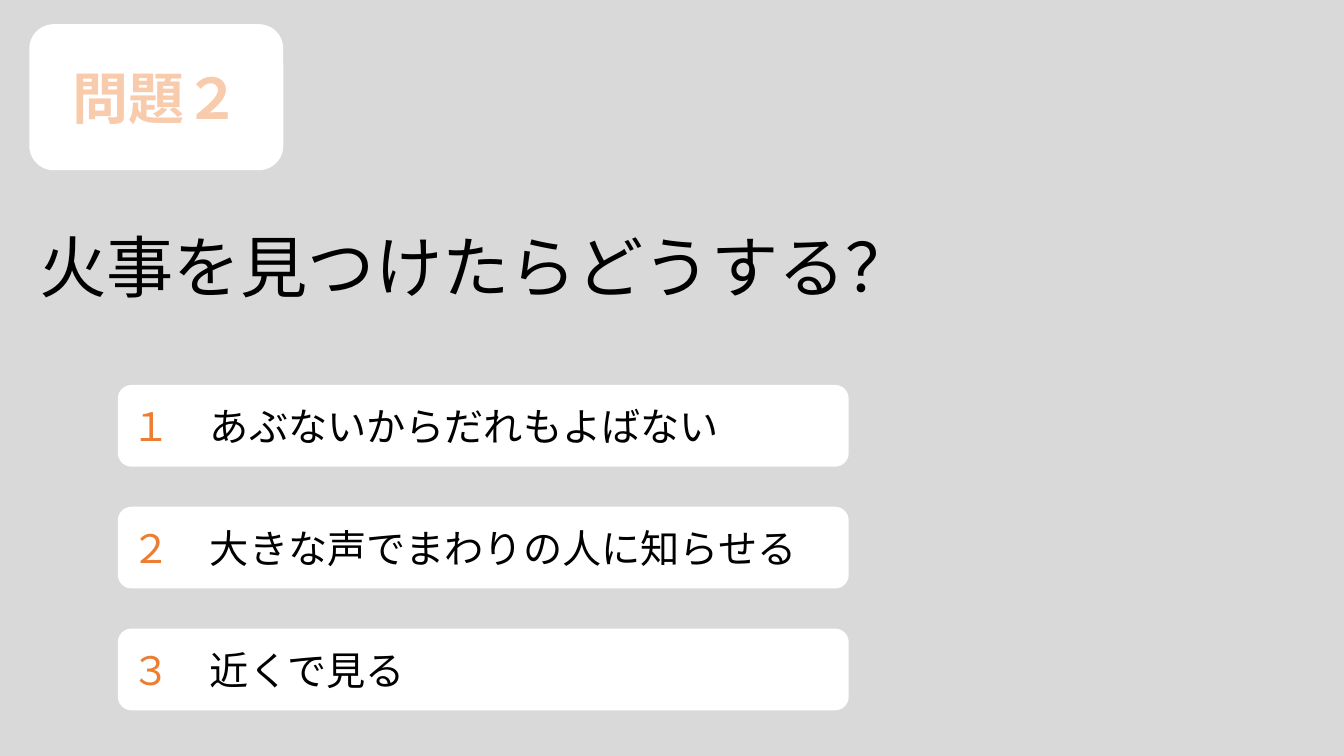
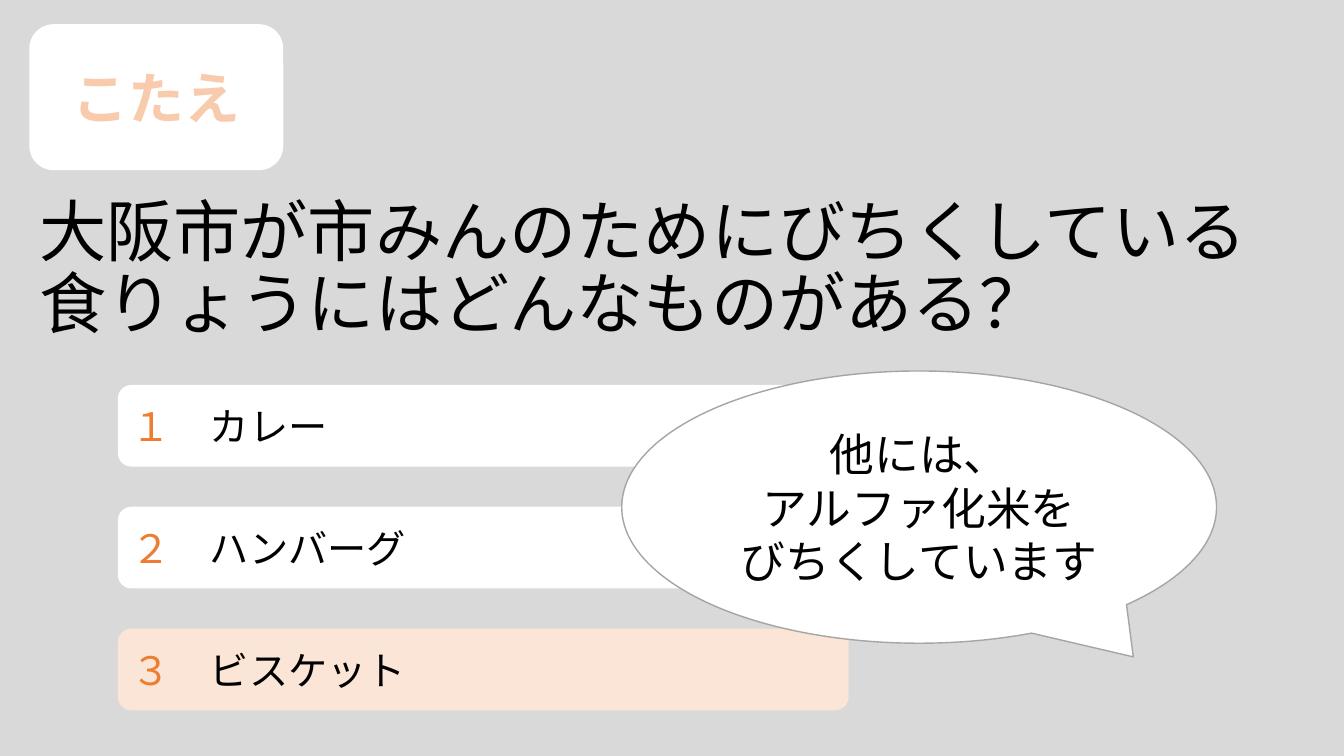
import pptx
import pptx.dml.color
import pptx.enum.shapes
import pptx.enum.text
import pptx.oxml.ns
import pptx.util
from lxml import etree

Cm = pptx.util.Cm
Pt = pptx.util.Pt
RGBColor = pptx.dml.color.RGBColor
Shape = pptx.enum.shapes.MSO_SHAPE
Align = pptx.enum.text.PP_ALIGN
Anchor = pptx.enum.text.MSO_ANCHOR
qn = pptx.oxml.ns.qn

GREY = RGBColor(0xD9, 0xD9, 0xD9)
WHITE = RGBColor(0xFF, 0xFF, 0xFF)
BLACK = RGBColor(0x00, 0x00, 0x00)
ORANGE = RGBColor(0xED, 0x7D, 0x31)
PEACH = RGBColor(0xF8, 0xCB, 0xAD)
PALE_PEACH = RGBColor(0xFB, 0xE5, 0xD6)
CALLOUT_EDGE = RGBColor(0xA5, 0xA5, 0xA5)
FONT = "Noto Sans CJK JP"
NUMERALS = "１２３"


class QuizDeck:
    """Holds the quiz style and the slide being built."""

    def __init__(self):
        self.deck = pptx.Presentation()
        self.deck.slide_width = Cm(33.87)
        self.deck.slide_height = Cm(19.05)
        self.slide = None

    def new_slide(self):
        self.slide = self.deck.slides.add_slide(self.deck.slide_layouts[6])
        background = self.slide.background.fill
        background.solid()
        background.fore_color.rgb = GREY

    def style(self, run, size, color, bold=False, outline=None):
        run.font.size = Pt(size)
        run.font.bold = bold
        run.font.name = FONT
        run.font.color.rgb = color
        properties = run.font._element
        etree.SubElement(properties, qn("a:ea"), typeface=FONT)
        if outline:
            edge = etree.Element(qn("a:ln"), w=str(Pt(outline)))
            edge_fill = etree.SubElement(edge, qn("a:solidFill"))
            etree.SubElement(edge_fill, qn("a:srgbClr"), val=str(ORANGE))
            properties.insert(0, edge)

    def panel(self, kind, left, top, width, height, fill=WHITE):
        panel = self.slide.shapes.add_shape(
            kind, Cm(left), Cm(top), Cm(width), Cm(height))
        panel.shadow.inherit = False
        panel.fill.solid()
        panel.fill.fore_color.rgb = fill
        panel.line.fill.background()
        panel.text_frame.word_wrap = True
        panel.text_frame.vertical_anchor = Anchor.MIDDLE
        return panel

    def question(self, wording):
        question = self.slide.shapes.add_textbox(
            Cm(0.74), Cm(4.98), Cm(32.92), Cm(3.68))
        frame = question.text_frame
        frame.word_wrap = True
        frame.vertical_anchor = Anchor.MIDDLE
        frame.text = wording
        paragraph = frame.paragraphs[0]
        paragraph.line_spacing = 0.9
        for run in paragraph.runs:
            self.style(run, 48, BLACK)

    def badge(self, label):
        badge = self.panel(Shape.ROUNDED_RECTANGLE, 0.74, 0.61, 6.4, 3.68)
        badge.text_frame.text = label
        paragraph = badge.text_frame.paragraphs[0]
        paragraph.alignment = Align.CENTER
        self.style(paragraph.runs[0], 40, PEACH, bold=True, outline=1.75)

    def choices(self, answers, correct=None):
        for index, (numeral, answer) in enumerate(zip(NUMERALS, answers)):
            fill = PALE_PEACH if answer == correct else WHITE
            choice = self.panel(Shape.ROUNDED_RECTANGLE,
                                2.97, 9.7 + 3.07 * index, 18.42, 2.06, fill)
            choice.text_frame.text = numeral + "　"
            paragraph = choice.text_frame.paragraphs[0]
            paragraph.alignment = Align.LEFT
            self.style(paragraph.runs[0], 28, ORANGE, outline=0.75)
            wording = paragraph.add_run()
            wording.text = answer
            self.style(wording, 28, BLACK)

    def callout(self, lines):
        callout = self.panel(Shape.OVAL_CALLOUT, 15.67, 9.35, 14.99, 6.86)
        callout.adjustments[0] = 0.36
        callout.adjustments[1] = 0.55
        callout.line.color.rgb = CALLOUT_EDGE
        callout.line.width = Pt(1)
        callout.text_frame.text = "\n".join(lines)
        for paragraph in callout.text_frame.paragraphs:
            paragraph.alignment = Align.CENTER
            self.style(paragraph.runs[0], 32, BLACK)


def main():
    quiz = QuizDeck()

    quiz.new_slide()
    quiz.question("火事を見つけたらどうする？")
    quiz.badge("問題２")
    quiz.choices(["あぶないからだれもよばない",
                  "大きな声でまわりの人に知らせる",
                  "近くで見る"])

    quiz.new_slide()
    quiz.question("大阪市が市みんのためにびちくしている\v"
                  "食りょうにはどんなものがある？")
    quiz.badge("こたえ")
    quiz.choices(["カレー", "ハンバーグ", "ビスケット"], correct="ビスケット")
    quiz.callout(["他には、", "アルファ化米を", "びちくしています"])

    quiz.deck.save("out.pptx")


if __name__ == "__main__":
    main()
